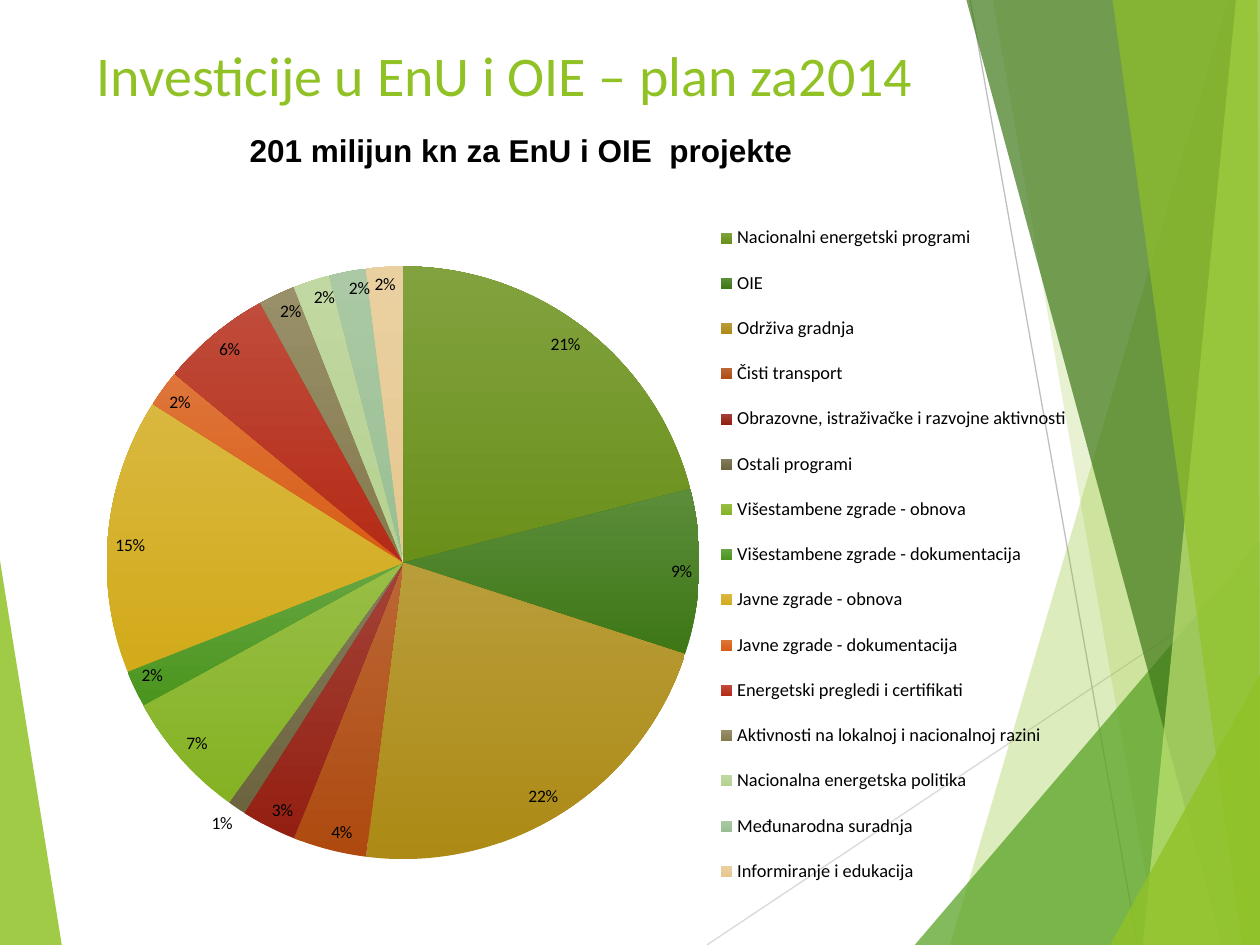
from lxml import etree
from pptx import Presentation
from pptx.chart.data import CategoryChartData
from pptx.dml.color import RGBColor
from pptx.enum.chart import XL_CHART_TYPE, XL_LABEL_POSITION, XL_LEGEND_POSITION
from pptx.enum.shapes import MSO_CONNECTOR
from pptx.enum.text import MSO_ANCHOR, PP_ALIGN
from pptx.oxml import parse_xml
from pptx.oxml.ns import nsdecls, qn
from pptx.util import Inches, Pt

PIE = XL_CHART_TYPE.PIE
INSIDE, OUTSIDE = XL_LABEL_POSITION.INSIDE_END, XL_LABEL_POSITION.OUTSIDE_END
RIGHT = XL_LEGEND_POSITION.RIGHT
STRAIGHT = MSO_CONNECTOR.STRAIGHT
TOP = MSO_ANCHOR.TOP
LEFT, CENTER = PP_ALIGN.LEFT, PP_ALIGN.CENTER

LIME, GREEN, DARK_GREEN, PALE_LIME = "90C226", "54A021", "3F7819", "C0E474"
BLACK = "000000"

# Corner points, colour and opacity of the facets, back to front
FACETS = [
    ([(0, 4.45), (0.49, 7.5), (0, 7.5)], LIME, 85),
    ([(9.75, 0), (7.54, 7.5), (10, 7.5), (10, 0)], LIME, 30),
    ([(7.88, 0), (9.19, 7.5), (10, 7.5), (10, 0)], LIME, 20),
    ([(7.26, 7.5), (10, 4.29), (10, 7.5)], GREEN, 72),
    ([(7.67, 0), (9.7, 7.5), (10, 7.5), (10, 0)], DARK_GREEN, 70),
    ([(9.81, 0), (9.07, 7.5), (10, 7.5), (10, 0)], PALE_LIME, 70),
    ([(8.83, 0), (9.86, 7.5), (10, 7.5), (9.98, 0)], LIME, 65),
    ([(8.81, 7.5), (10, 5.35), (10, 7.5)], LIME, 80),
]

# Programme, share in percent, slice colour
INVESTMENTS = [
    ("Nacionalni energetski programi", 21, "6A901A"),
    ("OIE", 9, "3D7716"),
    ("Održiva gradnja", 22, "AC8A15"),
    ("Čisti transport", 4, "AE4A10"),
    ("Obrazovne, istraživačke i razvojne aktivnosti", 3, "931F12"),
    ("Ostali programi", 1, "6C643E"),
    ("Višestambene zgrade - obnova", 7, "84B223"),
    ("Višestambene zgrade - dokumentacija", 2, "4A951E"),
    ("Javne zgrade - obnova", 15, "D2AA1A"),
    ("Javne zgrade - dokumentacija", 2, "D85C15"),
    ("Energetski pregledi i certifikati", 6, "B42A16"),
    ("Aktivnosti na lokalnoj i nacionalnoj razini", 2, "857A4C"),
    ("Nacionalna energetska politika", 2, "B5D190"),
    ("Međunarodna suradnja", 2, "9ABF93"),
    ("Informiranje i edukacija", 2, "E6C78F"),
]


def rgb(color):
    return RGBColor.from_string(color)


def lighter(color, share=0.16):
    channels = (int(color[i:i + 2], 16) for i in (0, 2, 4))
    return "".join(f"{round(c + (255 - c) * share):02X}" for c in channels)


def manual_layout(x, y, w, h, inner=False):
    target = '<c:layoutTarget val="inner"/>' if inner else ""
    sizes = "".join(f'<c:{tag} val="{value}"/>'
                    for tag, value in zip("xywh", (x, y, w, h)))
    return parse_xml(
        f'<c:layout {nsdecls("c")}><c:manualLayout>{target}'
        f'<c:xMode val="edge"/><c:yMode val="edge"/>{sizes}'
        '</c:manualLayout></c:layout>')


class SlideBuilder:
    font = "Calibri"

    def __init__(self, slide):
        self.shapes = slide.shapes

    def facet(self, points, color, opacity):
        corners = [(Inches(x), Inches(y)) for x, y in points]
        builder = self.shapes.build_freeform(*corners[0])
        builder.add_line_segments(corners[1:])
        facet = builder.convert_to_shape()
        facet.shadow.inherit = False
        facet.line.fill.background()
        facet.fill.solid()
        facet.fill.fore_color.rgb = rgb(color)
        tone = facet._element.spPr.find(f".//{qn('a:srgbClr')}")
        etree.SubElement(tone, qn("a:alpha"), val=str(opacity * 1000))

    def line(self, x1, y1, x2, y2, color):
        line = self.shapes.add_connector(
            STRAIGHT, Inches(x1), Inches(y1), Inches(x2), Inches(y2))
        line.line.color.rgb = rgb(color)
        line.line.width = Pt(0.75)
        etree.SubElement(line._element.spPr, qn("a:effectLst"))

    def text(self, x, y, w, h, words, size, color, align=LEFT, font=None, bold=False):
        frame = self.shapes.add_textbox(
            Inches(x), Inches(y), Inches(w), Inches(h)).text_frame
        frame.word_wrap = True
        frame.vertical_anchor = TOP
        paragraph = frame.paragraphs[0]
        paragraph.alignment = align
        run = paragraph.add_run()
        run.text = words
        run.font.name = font or self.font
        run.font.size = Pt(size)
        run.font.bold = bold
        run.font.color.rgb = rgb(color)

    def pie(self, x, y, w, h, rows):
        data = CategoryChartData()
        data.categories = [name for name, _, _ in rows]
        data.add_series("Series 1", [share for _, share, _ in rows])
        chart = self.shapes.add_chart(
            PIE, Inches(x), Inches(y), Inches(w), Inches(h), data).chart
        chart.has_title = False
        chart.font.name = self.font
        chart.font.size = Pt(10)
        chart.font.color.rgb = rgb(BLACK)
        self.legend(chart)
        plot_area = chart._chartSpace.chart.plotArea
        for old in plot_area.findall(qn("c:layout")):
            plot_area.remove(old)
        plot_area.insert(0, manual_layout(0.03, 0.13, 0.59, 0.76, inner=True))

        plot = chart.plots[0]
        plot.vary_by_categories = True
        plot.has_data_labels = True
        labels = plot.data_labels
        labels.show_value = False
        labels.show_percentage = True
        labels.number_format = "0%"
        labels.number_format_is_linked = False
        labels.position = INSIDE

        for index, (_, share, color) in enumerate(rows):
            point = plot.series[0].points[index]
            fill = point.format.fill
            fill.gradient()
            fill.gradient_angle = 90
            fill.gradient_stops[0].color.rgb = rgb(color)
            fill.gradient_stops[1].color.rgb = rgb(lighter(color))
            point.format.line.fill.background()
            # Each label shows its percentage; the thinnest slice has it outside
            point.data_label.position = OUTSIDE if share == 1 else INSIDE
        for label in plot._element.iter(qn("c:dLbl")):
            label.find(qn("c:showVal")).set("val", "0")
            label.find(qn("c:showPercent")).set("val", "1")

    def legend(self, chart):
        chart.has_legend = True
        legend = chart.legend
        legend.position = RIGHT
        legend.include_in_layout = False
        legend.font.name = self.font
        legend.font.size = Pt(10.5)
        legend.font.color.rgb = rgb(BLACK)
        for old in legend._element.findall(qn("c:layout")):
            legend._element.remove(old)
        legend._element.find(qn("c:legendPos")).addnext(
            manual_layout(0.63, 0.05, 0.36, 0.9))


def main():
    deck = Presentation()
    deck.slide_width, deck.slide_height = Inches(10), Inches(7.5)
    page = SlideBuilder(deck.slides.add_slide(deck.slide_layouts[6]))

    # Background decoration
    page.facet(*FACETS[0])
    page.line(5.61, 7.5, 10, 4.57, "D9D9D9")
    page.line(7.7, 0, 9.03, 7.5, "BFBFBF")
    for facet in FACETS[1:]:
        page.facet(*facet)

    # Headings
    page.text(0.67, 0.27, 7.21, 1.04, "Investicije u EnU i OIE – plan za2014", 32, LIME)
    page.text(0.75, 0.99, 6.77, 0.4, "201 milijun kn za EnU i OIE  projekte", 18, BLACK,
              align=CENTER, font="Arial", bold=True)

    # Investment shares
    page.pie(0.59, 1.31, 8.03, 6.19, INVESTMENTS)
    deck.save("out.pptx")


if __name__ == "__main__":
    main()
